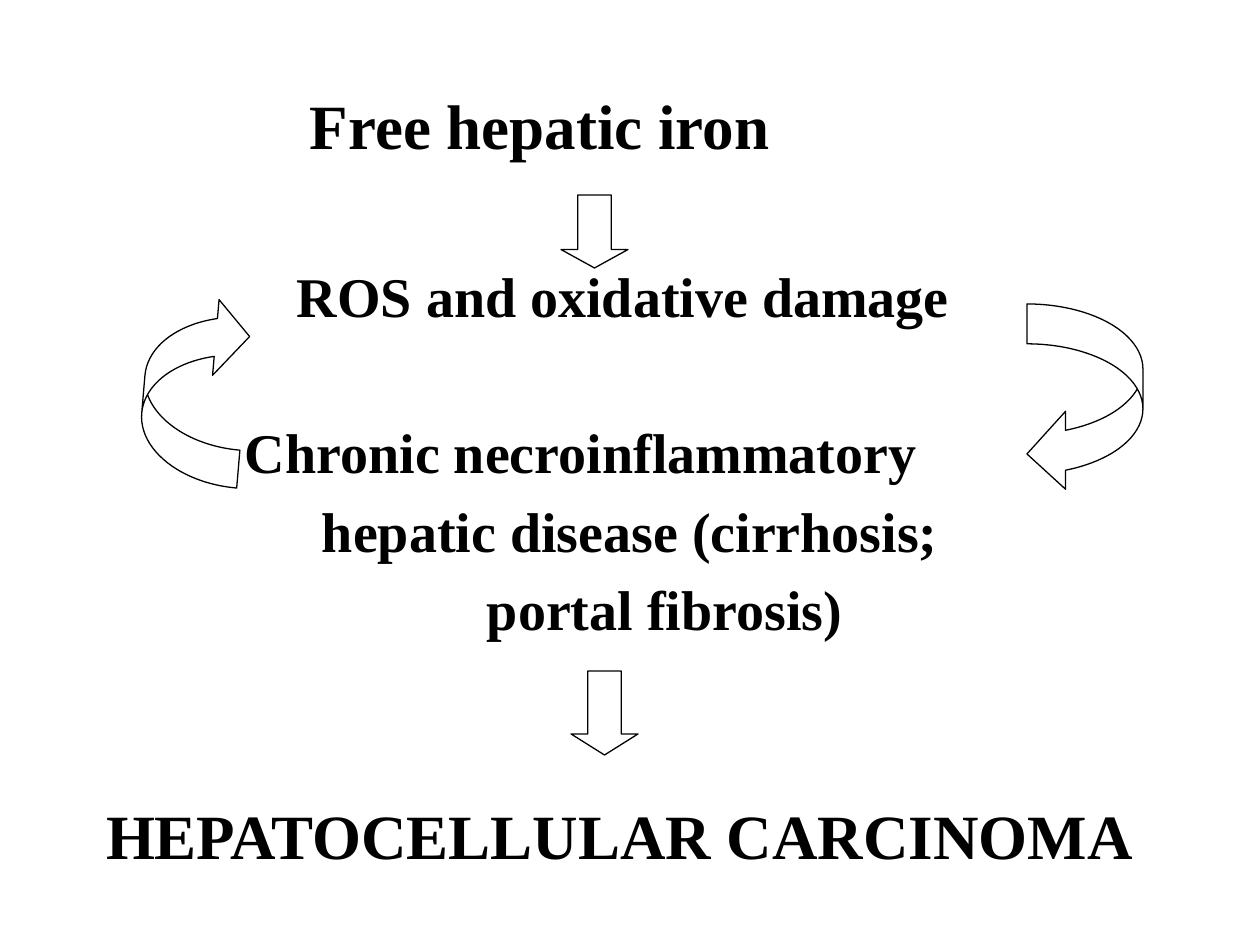
from pptx import Presentation
from pptx.dml.color import RGBColor
from pptx.enum import shapes, text
from pptx.util import Emu, Pt

EMU_PER_PX = 914400 / 126


def px(length):
    return Emu(round(length * EMU_PER_PX))


def colour(hex_string):
    return RGBColor.from_string(hex_string)


class Diagram:
    """Holds the style and the current page."""
    ink = "000000"
    font = {"name": "Times New Roman", "bold": True}
    line_width = 0.75

    def __init__(self, page):
        self.page = page

    def text(self, left, top, width, height, lines):
        """Write lines of (wording, indent in px, size, space before in points)."""
        box = self.page.shapes.add_textbox(*map(px, (left, top, width, height)))
        frame = box.text_frame
        settings = {"word_wrap": True, "margin_left": 0, "margin_right": 0,
                    "margin_top": 0, "margin_bottom": 0}
        for name, value in settings.items():
            setattr(frame, name, value)
        for number, (wording, indent, size, gap) in enumerate(lines):
            para = frame.add_paragraph() if number else frame.paragraphs[0]
            para.alignment = text.PP_ALIGN.LEFT
            para.space_before = Pt(gap)
            para._p.get_or_add_pPr().set("marL", str(px(indent)))
            span = para.add_run()
            span.text = wording
            for name, value in {**self.font, "size": Pt(size)}.items():
                setattr(span.font, name, value)
            span.font.color.rgb = colour(self.ink)

    def arrow(self, kind, left, top, width, height, adjustments,
              rotation=0, flipped=False):
        arrow = self.page.shapes.add_shape(
            kind, *map(px, (left, top, width, height)))
        for number, value in enumerate(adjustments):
            arrow.adjustments[number] = value
        arrow.shadow.inherit = False
        arrow.fill.background()
        arrow.line.color.rgb = colour(self.ink)
        arrow.line.width = Pt(self.line_width)
        arrow.rotation = rotation
        if flipped:
            arrow._element.spPr.xfrm.set("flipH", "1")


def main():
    deck = Presentation()
    deck.slide_width, deck.slide_height = px(1260), px(945)
    diagram = Diagram(deck.slides.add_slide(deck.slide_layouts[6]))
    kinds = shapes.MSO_SHAPE

    diagram.text(96, 86, 1071, 560, [
        ("Free hepatic iron", 214, 36, 0),
        ("ROS and oxidative damage", 201, 32, 56.9),
        ("Chronic necroinflammatory", 149, 32, 50.7),
        ("hepatic disease (cirrhosis;", 226, 32, 6.7),
        ("portal fibrosis)", 391, 32, 6.7),
    ])
    diagram.arrow(kinds.CURVED_RIGHT_ARROW, 144, 294, 101, 190,
                  (0.376, 0.752, 0.333), rotation=184.9, flipped=True)
    diagram.arrow(kinds.CURVED_LEFT_ARROW, 1027, 304, 116, 189,
                  (0.344, 0.672, 0.333))
    diagram.arrow(kinds.DOWN_ARROW, 561, 195, 67, 73, (0.5, 0.275))
    diagram.text(106, 797, 1130, 73, [("HEPATOCELLULAR CARCINOMA", 0, 36, 0)])
    diagram.arrow(kinds.DOWN_ARROW, 571, 671, 67, 84, (0.5, 0.314))

    deck.save("out.pptx")


if __name__ == "__main__":
    main()
